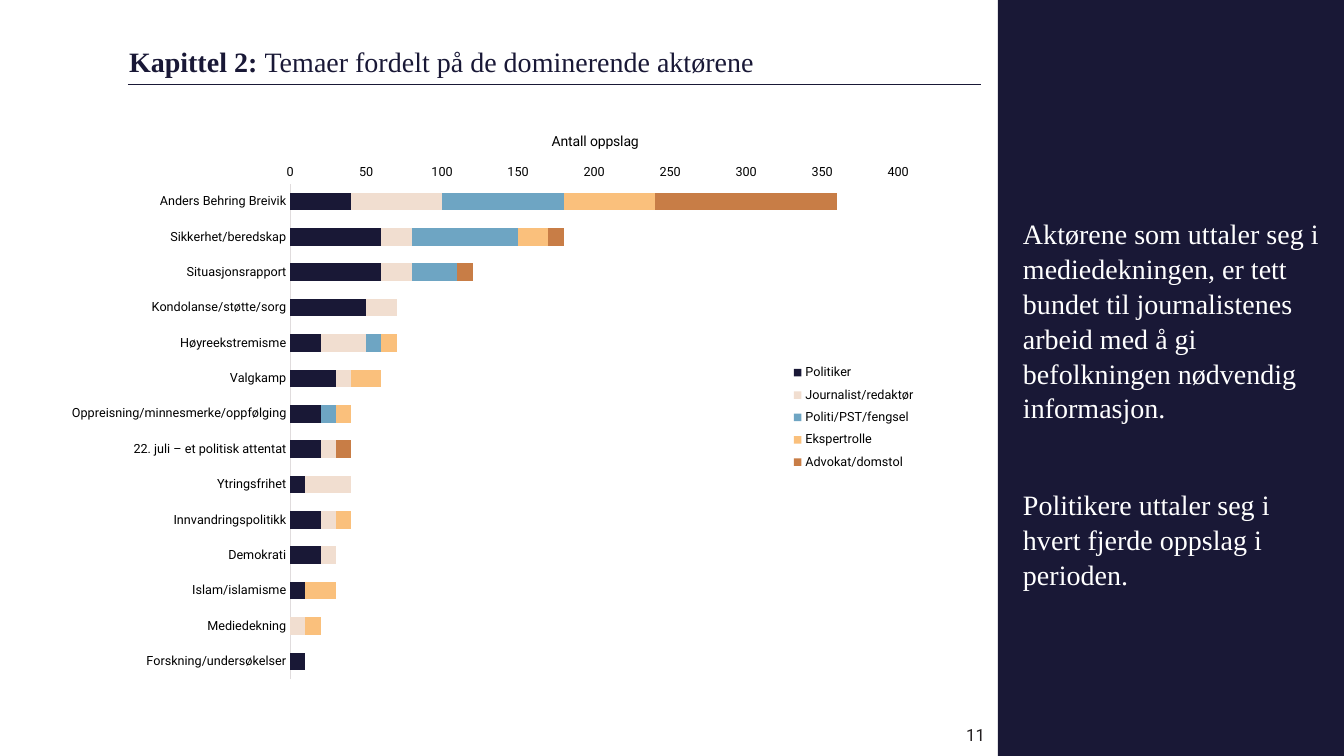
"""Build a slide with a stacked bar chart of topics by actor and a text panel."""
import lxml.etree
import pptx
import pptx.chart.data
import pptx.dml.color
import pptx.enum.chart
import pptx.enum.shapes
import pptx.enum.text
import pptx.oxml.ns
import pptx.util

NAVY = pptx.dml.color.RGBColor(0x19, 0x18, 0x36)
BLUSH = pptx.dml.color.RGBColor(0xF1, 0xDE, 0xD0)
BLUE = pptx.dml.color.RGBColor(0x6E, 0xA5, 0xC3)
AMBER = pptx.dml.color.RGBColor(0xFA, 0xC0, 0x7C)
RUST = pptx.dml.color.RGBColor(0xC8, 0x7D, 0x46)
WHITE = pptx.dml.color.RGBColor(0xFF, 0xFF, 0xFF)
BLACK = pptx.dml.color.RGBColor(0x00, 0x00, 0x00)
GREY = pptx.dml.color.RGBColor(0xE0, 0xDC, 0xDD)
INK = pptx.dml.color.RGBColor(0x23, 0x1F, 0x20)

EMU_PER_PX = 914400 / 100.8
SERIF = "Times New Roman"
SANS = "Roboto"

TOPICS = [
    "Anders Behring Breivik", "Sikkerhet/beredskap", "Situasjonsrapport",
    "Kondolanse/støtte/sorg", "Høyreekstremisme", "Valgkamp",
    "Oppreisning/minnesmerke/oppfølging", "22. juli – et politisk attentat",
    "Ytringsfrihet", "Innvandringspolitikk", "Demokrati", "Islam/islamisme",
    "Mediedekning", "Forskning/undersøkelser",
]
ACTORS = [
    ("Politiker", NAVY, [40, 60, 60, 50, 20, 30, 20, 20, 10, 20, 20, 10, 0, 10]),
    ("Journalist/redaktør", BLUSH, [60, 20, 20, 20, 30, 10, 0, 10, 30, 10, 10, 0, 10, 0]),
    ("Politi/PST/fengsel", BLUE, [80, 70, 30, 0, 10, 0, 10, 0, 0, 0, 0, 0, 0, 0]),
    ("Ekspertrolle", AMBER, [60, 20, 0, 0, 10, 20, 10, 0, 0, 10, 0, 20, 10, 0]),
    ("Advokat/domstol", RUST, [120, 10, 10, 0, 0, 0, 0, 10, 0, 0, 0, 0, 0, 0]),
]


def px(*lengths):
    return [pptx.util.Emu(round(n * EMU_PER_PX)) for n in lengths]


class SlideBuilder:
    def __init__(self, prs):
        self.slide = prs.slides.add_slide(prs.slide_layouts[1])
        self.shapes = self.slide.shapes

    def style(self, font, size, color, name=SANS, bold=False):
        font.size = pptx.util.Pt(size)
        font.name = name
        font.bold = bold
        font.color.rgb = color

    def send_to_back(self, sp):
        self.shapes._spTree.insert(2, sp._element)

    def place(self, sp, box, anchor):
        sp.left, sp.top, sp.width, sp.height = px(*box)
        tf = sp.text_frame
        tf.word_wrap = True
        tf.auto_size = pptx.enum.text.MSO_AUTO_SIZE.NONE
        tf.vertical_anchor = anchor
        tf.margin_left = tf.margin_top = tf.margin_right = tf.margin_bottom = 0
        return tf

    def panel(self, *box):
        sp = self.shapes.add_shape(pptx.enum.shapes.MSO_SHAPE.RECTANGLE, *px(*box))
        sp.shadow.inherit = False
        sp.fill.solid()
        sp.fill.fore_color.rgb = NAVY
        sp.line.fill.background()
        self.send_to_back(sp)

    def rule(self, *ends):
        sp = self.shapes.add_connector(pptx.enum.shapes.MSO_CONNECTOR.STRAIGHT, *px(*ends))
        sp.line.color.rgb = NAVY
        sp.line.width = pptx.util.Pt(0.75)
        lxml.etree.SubElement(sp._element.spPr, pptx.oxml.ns.qn("a:effectLst"))
        self.send_to_back(sp)

    def title(self, lead, rest, *box):
        tf = self.place(self.shapes.title, box, pptx.enum.text.MSO_ANCHOR.MIDDLE)
        p = tf.paragraphs[0]
        p.alignment = pptx.enum.text.PP_ALIGN.LEFT
        p.line_spacing = 0.9
        for text, bold in ((lead, True), (rest, False)):
            r = p.add_run()
            r.text = text
            self.style(r.font, 20, NAVY, SERIF, bold)

    def body(self, texts, *box):
        tf = self.place(self.slide.placeholders[1], box, pptx.enum.text.MSO_ANCHOR.TOP)
        tf.text = "\n".join(texts)
        for i, p in enumerate(tf.paragraphs):
            pPr = p._p.get_or_add_pPr()
            pPr.set("marL", "0")
            pPr.set("indent", "0")
            lxml.etree.SubElement(pPr, pptx.oxml.ns.qn("a:buNone"))
            p.line_spacing = 1.04
            p.space_before = pptx.util.Pt(44 if i else 0)
            self.style(p.runs[0].font, 20, WHITE, SERIF)

    def page_number(self, text, *box):
        sp = self.shapes.add_textbox(*px(*box))
        tf = self.place(sp, box, pptx.enum.text.MSO_ANCHOR.MIDDLE)
        tf.margin_right = pptx.util.Inches(0.1)
        p = tf.paragraphs[0]
        p.text = text
        p.alignment = pptx.enum.text.PP_ALIGN.RIGHT
        self.style(p.runs[0].font, 12, INK)

    def chart_layout(self, parent, index, inner=False, **fractions):
        qn = pptx.oxml.ns.qn
        for old in parent.findall(qn("c:layout")):
            parent.remove(old)
        layout = parent.makeelement(qn("c:layout"))
        manual = lxml.etree.SubElement(layout, qn("c:manualLayout"))
        settings = {"layoutTarget": "inner"} if inner else {}
        settings.update(xMode="edge", yMode="edge", **fractions)
        for tag, val in settings.items():
            lxml.etree.SubElement(manual, qn("c:" + tag)).set("val", str(val))
        parent.insert(index, layout)

    def bar_chart(self, topics, actors, axis_title, *box):
        data = pptx.chart.data.CategoryChartData()
        data.categories = topics
        for name, _, values in actors:
            data.add_series(name, values)
        kind = pptx.enum.chart.XL_CHART_TYPE.BAR_STACKED
        chart = self.shapes.add_chart(kind, *px(*box), data).chart
        self.style(chart.font, 10, BLACK)
        chart.has_title = False
        plot = chart.plots[0]
        plot.gap_width = plot.overlap = 100
        plot.vary_by_categories = False
        for series, (_, color, _) in zip(plot.series, actors):
            series.format.fill.solid()
            series.format.fill.fore_color.rgb = color

        topic_axis, count_axis = chart.category_axis, chart.value_axis
        for axis in (topic_axis, count_axis):
            axis.major_tick_mark = axis.minor_tick_mark = pptx.enum.chart.XL_TICK_MARK.NONE
            axis.has_major_gridlines = False
            self.style(axis.tick_labels.font, 9, BLACK)
        topic_axis.reverse_order = True
        topic_axis.format.line.color.rgb = GREY
        topic_axis.format.line.width = pptx.util.Pt(0.75)
        count_axis.minimum_scale, count_axis.maximum_scale = 0, 400
        count_axis.major_unit = 50
        count_axis.format.line.fill.background()
        p = count_axis.axis_title.text_frame.paragraphs[0]
        p.text = axis_title
        self.style(p.runs[0].font, 10, BLACK)

        chart.has_legend = True
        legend = chart.legend
        legend.position = pptx.enum.chart.XL_LEGEND_POSITION.RIGHT
        legend.include_in_layout = False
        self.style(legend.font, 9, BLACK)
        plot_area = chart._chartSpace.chart.plotArea
        self.chart_layout(plot_area, 0, inner=True, x=0.295, y=0.105, w=0.669, h=0.869)
        self.chart_layout(count_axis.axis_title._element, 1, x=0.58, y=0.01)
        self.chart_layout(legend._element, 1, x=0.84, y=0.41, w=0.15, h=0.21)


def main():
    prs = pptx.Presentation()
    prs.slide_width, prs.slide_height = px(1344, 756)
    s = SlideBuilder(prs)
    s.panel(998, 0, 346, 756)
    s.rule(128, 85, 981, 85)
    s.title("Kapittel 2: ", "Temaer fordelt på de dominerende aktørene", 129, 42, 1157, 42)
    s.body([
        "Aktørene som uttaler seg i mediedekningen, er tett bundet til "
        "journalistenes arbeid med å gi befolkningen nødvendig informasjon.",
        "Politikere uttaler seg i hvert fjerde oppslag i perioden.",
    ], 1023, 215, 298, 350)
    s.bar_chart(TOPICS, ACTORS, "Antall oppslag", 22, 124, 909, 570)
    s.page_number("11", 883, 714, 112, 42)
    prs.save("out.pptx")


if __name__ == "__main__":
    main()
